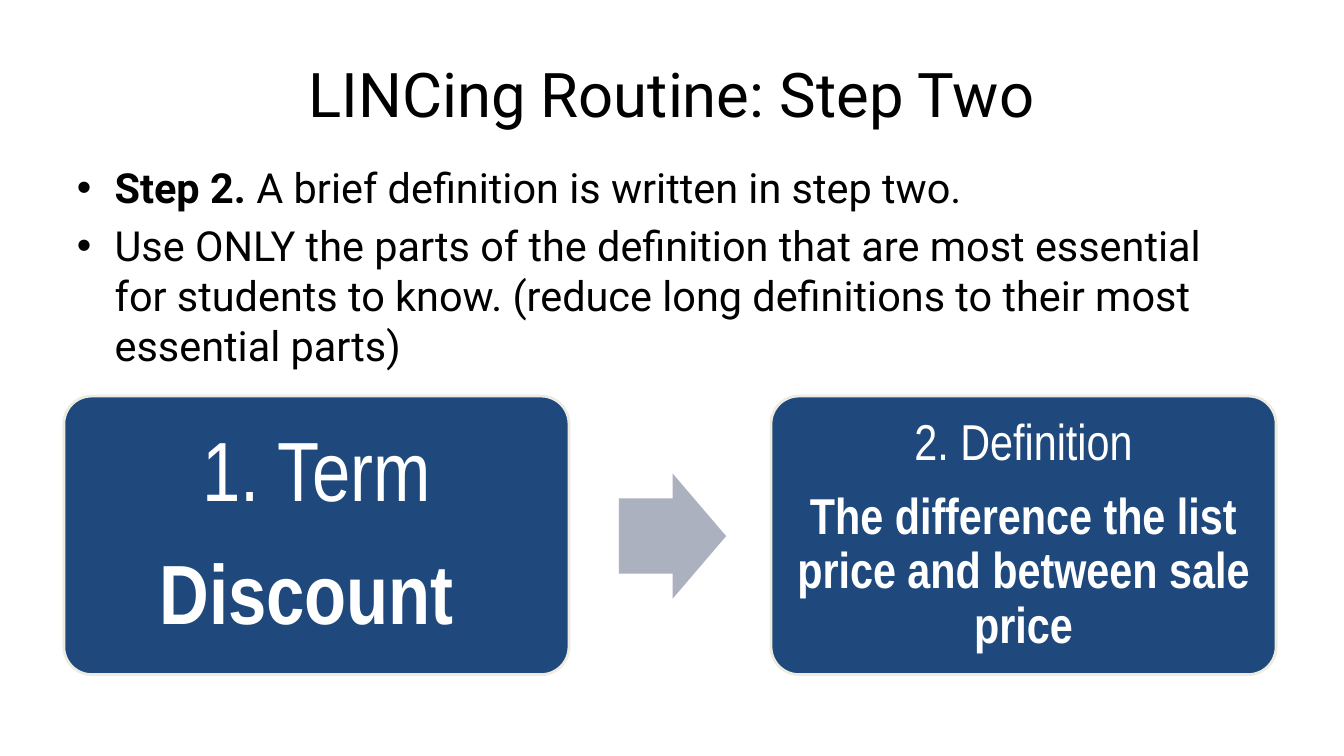
from lxml.etree import SubElement
from pptx import Presentation
from pptx.dml.color import RGBColor
from pptx.enum.shapes import MSO_SHAPE
from pptx.enum.text import MSO_ANCHOR, PP_ALIGN
from pptx.oxml.ns import qn
from pptx.util import Cm, Pt


def color(value):
    return RGBColor.from_string(value)


def write(paragraph, text, font="Roboto", size=29.6, fill="000000", bold=False):
    run = paragraph.add_run()
    run.text = text
    run.font.name = font
    run.font.size = Pt(size)
    run.font.color.rgb = color(fill)
    run.font.bold = bold


class LessonSlide:
    """Style and drawing methods for one lesson slide."""

    navy, cream, gray, white = "1F497D", "EEECE1", "ACB1BF", "FFFFFF"
    card_font = "Arial Narrow"

    def __init__(self, presentation):
        self.slide = presentation.slides.add_slide(presentation.slide_layouts[6])

    def text_box(self, left, top, width, height, anchor=MSO_ANCHOR.TOP, inset=None):
        box = self.slide.shapes.add_textbox(Cm(left), Cm(top), Cm(width), Cm(height))
        frame = box.text_frame
        frame.word_wrap = True
        frame.vertical_anchor = anchor
        if inset is not None:
            frame.margin_left = frame.margin_right = Cm(inset)
            frame.margin_top = frame.margin_bottom = Cm(inset)
        return frame

    def title(self, text):
        frame = self.text_box(1.69, 0.76, 30.48, 3.18, MSO_ANCHOR.MIDDLE)
        paragraph = frame.paragraphs[0]
        paragraph.alignment = PP_ALIGN.CENTER
        write(paragraph, text, size=44)

    def bullets(self, items):
        frame = self.text_box(1.69, 3.96, 30.38, 5.92)
        for index, runs in enumerate(items):
            paragraph = frame.add_paragraph() if index else frame.paragraphs[0]
            paragraph.space_before = Pt(6 if index else 0)
            properties = paragraph._p.get_or_add_pPr()
            properties.set("marL", str(Cm(0.95)))
            properties.set("indent", str(-Cm(0.95)))
            SubElement(properties, qn("a:buFont"), typeface="Arial")
            SubElement(properties, qn("a:buChar"), char="•")
            for text, bold in runs:
                write(paragraph, text, bold=bold)

    def shape(self, kind, left, top, width, height, fill, adjustments):
        shape = self.slide.shapes.add_shape(kind, Cm(left), Cm(top), Cm(width), Cm(height))
        shape.shadow.inherit = False
        shape.fill.solid()
        shape.fill.fore_color.rgb = color(fill)
        shape.line.fill.background()
        for index, value in enumerate(adjustments):
            shape.adjustments[index] = value
        return shape

    def card(self, left, heading, answer, size, inset):
        top, width, height, margin = 9.98, 12.73, 7.02, 0.2
        card = self.shape(MSO_SHAPE.ROUNDED_RECTANGLE, left, top, width, height,
                          self.navy, [0.1])
        card.line.color.rgb = color(self.cream)
        card.line.width = Pt(2)
        frame = self.text_box(left + margin, top + margin, width - 2 * margin,
                              height - 2 * margin, MSO_ANCHOR.MIDDLE, inset)
        answer_paragraph = frame.add_paragraph()
        answer_paragraph.space_before = Pt(round(size * 0.39))
        for paragraph, text in zip(frame.paragraphs, (heading, answer)):
            paragraph.alignment = PP_ALIGN.CENTER
            paragraph.line_spacing = 0.9
            write(paragraph, text, self.card_font, size, self.white, text == answer)

    def arrow(self):
        self.shape(MSO_SHAPE.RIGHT_ARROW, 15.6, 11.93, 2.7, 3.16, self.gray, [0.6, 0.5])


def main():
    presentation = Presentation()
    presentation.slide_width, presentation.slide_height = Cm(33.87), Cm(19.05)
    lesson = LessonSlide(presentation)
    lesson.title("LINCing Routine: Step Two")
    lesson.bullets([
        [("Step 2.", True), (" A brief definition is written in step two.", False)],
        [("Use ONLY the parts of the definition that are most essential for students "
          "to know. (reduce long definitions to their most essential parts)", False)],
    ])
    lesson.card(1.61, "1. Term", "Discount ", size=60, inset=0.64)
    lesson.arrow()
    lesson.card(19.43, "2. Definition",
                "The difference the list price and between sale price", size=36, inset=0.38)
    presentation.save("out.pptx")


if __name__ == "__main__":
    main()
